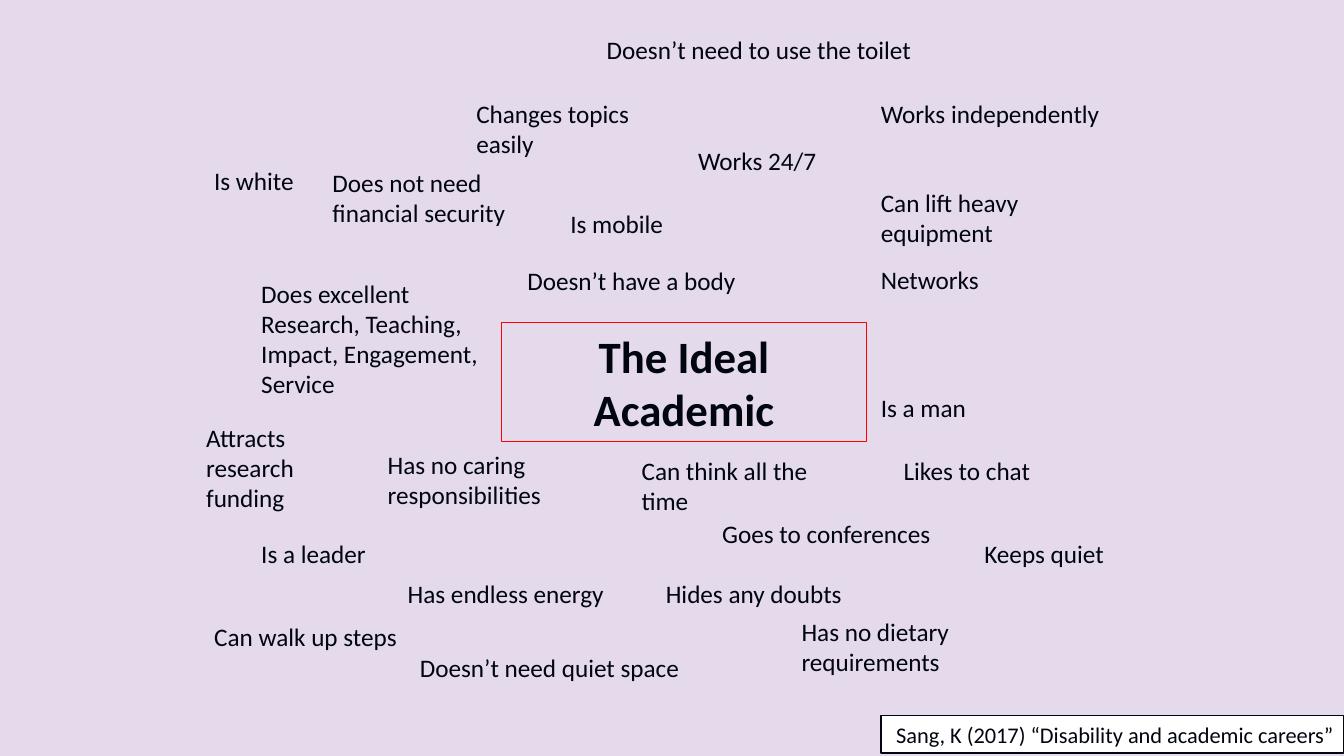
import pptx
import pptx.dml.color
import pptx.enum.shapes
import pptx.enum.text
import pptx.util

WIDTH, HEIGHT = pptx.util.Inches(13.33), pptx.util.Inches(7.5)
LINE_SHARE, PADDING_SHARE = 4.04, 1.33
INK = "00050E"
ALIGN = pptx.enum.text.PP_ALIGN
FIT = pptx.enum.text.MSO_AUTO_SIZE

TRAITS = [
    ("Works 24/7", 51.2, 18.5, 15.4, 1),
    ("Networks", 64.8, 34.3, 21.2, 1),
    ("Goes to conferences", 53, 67.9, 19.5, 1),
    ("Does excellent Research, Teaching, Impact, Engagement, Service", 18.7, 36.1, 18.9, 4),
    ("Is a leader", 18.7, 70.5, 17.7, 1),
    ("Changes topics easily", 34.7, 12.3, 14.2, 2),
    ("Is a man", 64.8, 51.2, 18.9, 1),
    ("Has no caring responsibilities", 28.1, 58.8, 20.7, 2),
    ("Is mobile", 41.7, 26.9, 18.3, 1),
    ("Works independently", 64.8, 12.3, 18.9, 1),
    ("Has endless energy", 29.6, 75.9, 24.2, 1),
    ("Can think all the time", 47, 59.6, 17.7, 2),
    ("Has no dietary requirements", 58.9, 80.9, 23, 2),
    ("Is white", 15.2, 21.2, 19.5, 1),
    ("Can lift heavy equipment", 64.8, 24.1, 17.1, 2),
    ("Attracts research funding", 14.6, 55.2, 13, 3),
    ("Likes to chat", 66.5, 59.6, 19.5, 1),
    ("Can walk up steps", 15.2, 81.5, 15.4, 1),
    ("Doesn’t need to use the toilet", 44.4, 3.9, 26, 1),
    ("Doesn’t have a body", 38.5, 34.5, 21.5, 1),
    ("Doesn’t need quiet space", 30.5, 85.6, 23.3, 1),
    ("Hides any doubts", 48.8, 75.9, 16, 1),
    ("Does not need financial security", 24, 21.5, 17.7, 2),
    ("Keeps quiet", 72.5, 70.5, 13.6, 1),
]


def paint(color_format, value):
    color_format.rgb = pptx.dml.color.RGBColor.from_string(value)


def fill(target, value):
    target.fill.solid()
    paint(target.fill.fore_color, value)


def outline(sp, value, width):
    paint(sp.line.color, value)
    sp.line.width = pptx.util.Pt(width)


def area(left, top, width, height):
    return [int(side * share / 100) for side, share in
            zip((WIDTH, HEIGHT, WIDTH, HEIGHT), (left, top, width, height))]


def write(sp, text, size=18, bold=False, align=ALIGN.LEFT, wrap=True, fit=FIT.NONE):
    tf = sp.text_frame
    tf.word_wrap = wrap
    tf.auto_size = fit
    p = tf.paragraphs[0]
    p.alignment = align
    r = p.add_run()
    r.text = text
    r.font.name = "Calibri"
    r.font.size = pptx.util.Pt(size)
    r.font.bold = bold
    paint(r.font.color, INK)


def add_citation(slide):
    sp = slide.shapes.add_shape(pptx.enum.shapes.MSO_SHAPE.RECTANGLE,
                                *area(65.55, 94.67, 34.43, 4.93))
    sp.shadow.inherit = False
    fill(sp, "FFFFFF")
    outline(sp, INK, 1)
    write(sp, "Sang, K (2017) “Disability and academic careers”", size=16,
          align=ALIGN.RIGHT, wrap=False, fit=FIT.SHAPE_TO_FIT_TEXT)


def add_trait(slide, text, left, top, width, lines):
    height = PADDING_SHARE + lines * LINE_SHARE
    sp = slide.shapes.add_textbox(*area(left, top, width, height))
    write(sp, text)


def set_title(slide):
    sp = slide.shapes.title
    sp.left, sp.top, sp.width, sp.height = area(37.3, 42.7, 27.2, 15.7)
    outline(sp, "FF0000", 0.75)
    write(sp, "The Ideal Academic", size=32, bold=True, align=ALIGN.CENTER)


def main():
    prs = pptx.Presentation()
    prs.slide_width, prs.slide_height = WIDTH, HEIGHT
    slide = prs.slides.add_slide(prs.slide_layouts[5])
    fill(slide.background, "E4DAEC")
    add_citation(slide)
    for trait in TRAITS:
        add_trait(slide, *trait)
    set_title(slide)
    prs.save("out.pptx")


if __name__ == "__main__":
    main()
